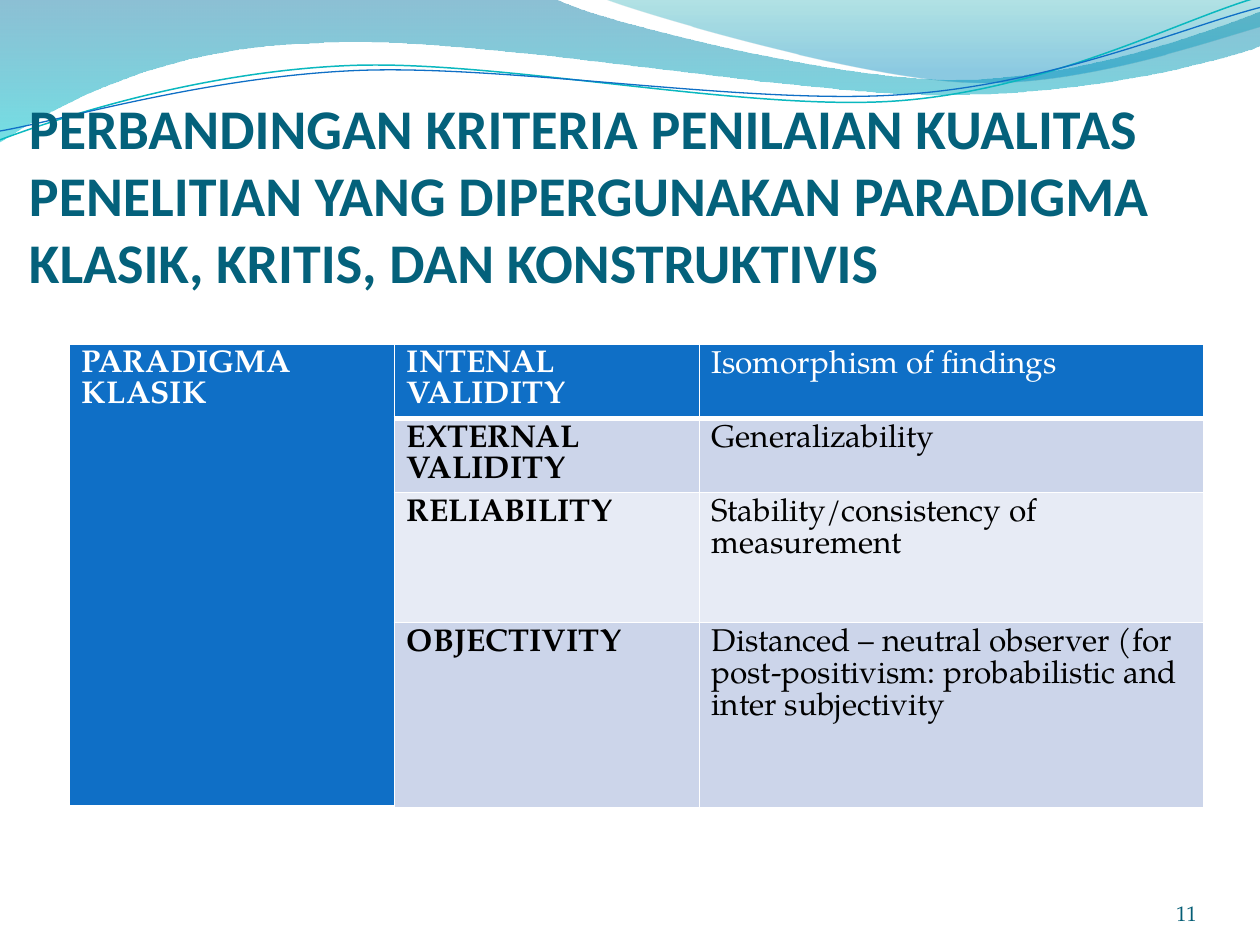
from math import cos, radians, sin

from pptx import Presentation
from pptx.dml.color import RGBColor
from pptx.enum.text import MSO_ANCHOR, PP_ALIGN
from pptx.oxml import parse_xml
from pptx.oxml.ns import nsdecls
from pptx.util import Inches, Pt

COLUMNS, ROWS = 10, 7.5
WHITE = RGBColor(0xFF, 0xFF, 0xFF)
BLACK = RGBColor(0x00, 0x00, 0x00)
BLUE = RGBColor(0x0F, 0x6F, 0xC6)
AQUA = RGBColor(0x0A, 0xB8, 0xBF)
TITLE_TEAL = RGBColor(0x04, 0x61, 0x7B)
NUMBER_TEAL = RGBColor(0x04, 0x5D, 0x75)
BANDS = (RGBColor(0xE7, 0xEB, 0xF5), RGBColor(0xCC, 0xD5, 0xEA))
DEEP_WAVE = ((0, RGBColor(0x00, 0x74, 0xA1), 45), (1, RGBColor(0x00, 0xC6, 0xCF), 55))
PALE_WAVE = ((0, RGBColor(0x00, 0xA1, 0xA9), 30), (0.8, RGBColor(0x00, 0x8B, 0xBF), 45))

# Each outline is a start point, then line ends (2 numbers) or Bézier segments (6 numbers).
LEFT_WAVE = [
    (0, 0), (4.4, -0.01), (4.76, 0.17, 6.64, 0.63, 7.58, 0.63),
    (8.53, 0.63, 9.58, 0.26, 10, 0.09), (10.01, 0.36),
    (9.83, 0.44, 8.7, 0.76, 7.46, 0.75), (6.22, 0.75, 3.82, 0.28, 2.57, 0.34),
    (1.29, 0.36, 0.46, 0.83, -0.01, 1.13), (0, 0),
]
RIGHT_WAVE = [
    (4.79, -0.01), (5.09, 0.11, 6.82, 0.62, 7.69, 0.65),
    (8.56, 0.69, 9.61, 0.32, 10, 0.21), (10, 0), (4.79, -0.01),
]
AQUA_CURVE = [
    (0, 1.11), (0.48, 0.93, 1.58, 0.57, 2.77, 0.52), (3.95, 0.47, 5.93, 0.89, 7.13, 0.8),
    (8.33, 0.71, 9.38, 0.15, 9.98, -0.02),
]
BLUE_CURVE = [
    (0, 1.04), (0.47, 0.96, 1.64, 0.61, 2.83, 0.56), (4.03, 0.51, 5.97, 0.84, 7.17, 0.75),
    (8.36, 0.67, 9.41, 0.21, 10, 0.06),
]
CURVE_TILT = 357.3

TITLE = ("PERBANDINGAN KRITERIA PENILAIAN KUALITAS PENELITIAN YANG DIPERGUNAKAN "
         "PARADIGMA KLASIK, KRITIS, DAN KONSTRUKTIVIS")
PARADIGM = "PARADIGMA KLASIK"
CRITERIA = [
    ("INTENAL VALIDITY", "Isomorphism of findings"),
    ("EXTERNAL VALIDITY", "Generalizability"),
    ("RELIABILITY", "Stability/consistency of measurement"),
    ("OBJECTIVITY", "Distanced – neutral observer (for post-positivism: "
                    "probabilistic and inter subjectivity"),
]
COLUMN_WIDTHS = (2.58, 2.42, 4)
ROW_HEIGHTS = (0.59, 0.59, 1.03, 1.47)


def untilt(outline, pivot, degrees):
    """Turn an outline back, so that a shape rotated by degrees shows it as given."""
    angle = radians(-degrees)

    def turn(x, y):
        across, down = x - pivot[0], y - pivot[1]
        return (pivot[0] + across * cos(angle) - down * sin(angle),
                pivot[1] + across * sin(angle) + down * cos(angle))

    return [sum((turn(*segment[i:i + 2]) for i in range(0, len(segment), 2)), ())
            for segment in outline]


class SlideBuilder:
    """Draws on one slide, measured in grid columns and rows."""

    heading_font = "Calibri"
    body_font = "TeX Gyre Pagella"

    def __init__(self, deck):
        self.page = deck.slides.add_slide(deck.slide_layouts[6])
        self.column = deck.slide_width / COLUMNS
        self.row = deck.slide_height / ROWS

    def place(self, across, down):
        return round(across * self.column), round(down * self.row)

    def outline(self, outline, close):
        """Build a freeform, then join the three points of each Bézier segment."""
        points = [self.place(*segment[i:i + 2])
                  for segment in outline for i in range(0, len(segment), 2)]
        builder = self.page.shapes.build_freeform(*points[0], scale=1.0)
        builder.add_line_segments(points[1:], close=close)
        shape = builder.convert_to_shape()
        shape.shadow.inherit = False
        lines = iter(shape.element.spPr.xpath(".//a:lnTo"))
        for segment in outline[1:]:
            line = next(lines)
            if len(segment) == 6:
                bezier = parse_xml(f'<a:cubicBezTo {nsdecls("a")}/>')
                line.addprevious(bezier)
                for part in (line, next(lines), next(lines)):
                    bezier.append(part[0])
                    part.getparent().remove(part)
        return shape

    def wave(self, outline, stops):
        shape = self.outline(outline, close=True)
        shape.line.fill.background()
        shape.fill.gradient()
        shape.fill.gradient_angle = 270
        for stop, (position, color, _) in zip(shape.fill.gradient_stops, stops):
            stop.position = position
            stop.color.rgb = color
        colors = shape.element.spPr.xpath(".//a:gs/a:srgbClr")
        for color, (_, _, opacity) in zip(colors, stops):
            color.append(parse_xml(f'<a:alpha {nsdecls("a")} val="{opacity * 1000}"/>'))

    def curve(self, outline, pivot, color, width):
        shape = self.outline(untilt(outline, pivot, CURVE_TILT), close=False)
        shape.rotation = CURVE_TILT
        shape.fill.background()
        shape.line.color.rgb = color
        shape.line.width = Pt(width)

    def style(self, para, font, size, color, bold=False):
        para.font.name = font
        para.font.size = Pt(size)
        para.font.color.rgb = color
        para.font.bold = bold

    def text(self, words, left, top, width, height, font, size, color,
             bold=False, align=PP_ALIGN.LEFT, inset_top=0):
        box = self.page.shapes.add_textbox(*self.place(left, top), *self.place(width, height))
        frame = box.text_frame
        frame.word_wrap = True
        frame.vertical_anchor = MSO_ANCHOR.BOTTOM
        frame.margin_left = frame.margin_right = frame.margin_bottom = 0
        frame.margin_top = Inches(inset_top)
        para = frame.paragraphs[0]
        para.text = words
        para.alignment = align
        self.style(para, font, size, color, bold)

    def cell(self, cell, words, fill, color, bold):
        cell.fill.solid()
        cell.fill.fore_color.rgb = fill
        para = cell.text_frame.paragraphs[0]
        para.text = words
        para.line_spacing = Pt(17.6 if bold else 18.2)
        self.style(para, self.body_font, 18, color, bold)

    def heading_borders(self, cell):
        properties = cell._tc.get_or_add_tcPr()
        for index, (side, width) in enumerate(zip("LRTB", (1, 1, 1, 3))):
            properties.insert(index, parse_xml(
                f'<a:ln{side} {nsdecls("a")} w="{Pt(width)}"><a:solidFill>'
                f'<a:srgbClr val="{WHITE}"/></a:solidFill></a:ln{side}>'))

    def criteria_table(self, left, top):
        table = self.page.shapes.add_table(
            len(ROW_HEIGHTS), len(COLUMN_WIDTHS), *self.place(left, top),
            *self.place(sum(COLUMN_WIDTHS), sum(ROW_HEIGHTS))).table
        for column, width in zip(table.columns, COLUMN_WIDTHS):
            column.width = round(width * self.column)
        for row, height in zip(table.rows, ROW_HEIGHTS):
            row.height = round(height * self.row)
        table.cell(0, 0).merge(table.cell(len(CRITERIA) - 1, 0))
        self.cell(table.cell(0, 0), PARADIGM, BLUE, WHITE, bold=True)
        for index, texts in enumerate(CRITERIA):
            fill, color = (BANDS[index % 2], BLACK) if index else (BLUE, WHITE)
            for column, words in enumerate(texts, start=1):
                self.cell(table.cell(index, column), words, fill, color, bold=column == 1)
        for column in range(len(COLUMN_WIDTHS)):
            self.heading_borders(table.cell(0, column))


def main():
    deck = Presentation()
    deck.slide_width, deck.slide_height = Inches(COLUMNS), Inches(ROWS)
    slide = SlideBuilder(deck)
    slide.wave(LEFT_WAVE, DEEP_WAVE)
    slide.wave(RIGHT_WAVE, PALE_WAVE)
    slide.curve(AQUA_CURVE, (4.99, 0.58), AQUA, 0.85)
    slide.curve(BLUE_CURVE, (5, 0.59), BLUE, 0.75)
    slide.text(TITLE, 0.23, 0.3, 9.45, 2.04, slide.heading_font, 32, TITLE_TEAL,
               bold=True, inset_top=0.05)
    slide.criteria_table(0.55, 2.73)
    slide.text("11", 8.67, 6.95, 0.83, 0.4, slide.body_font, 12, NUMBER_TEAL,
               align=PP_ALIGN.RIGHT)
    deck.save("out.pptx")


if __name__ == "__main__":
    main()
